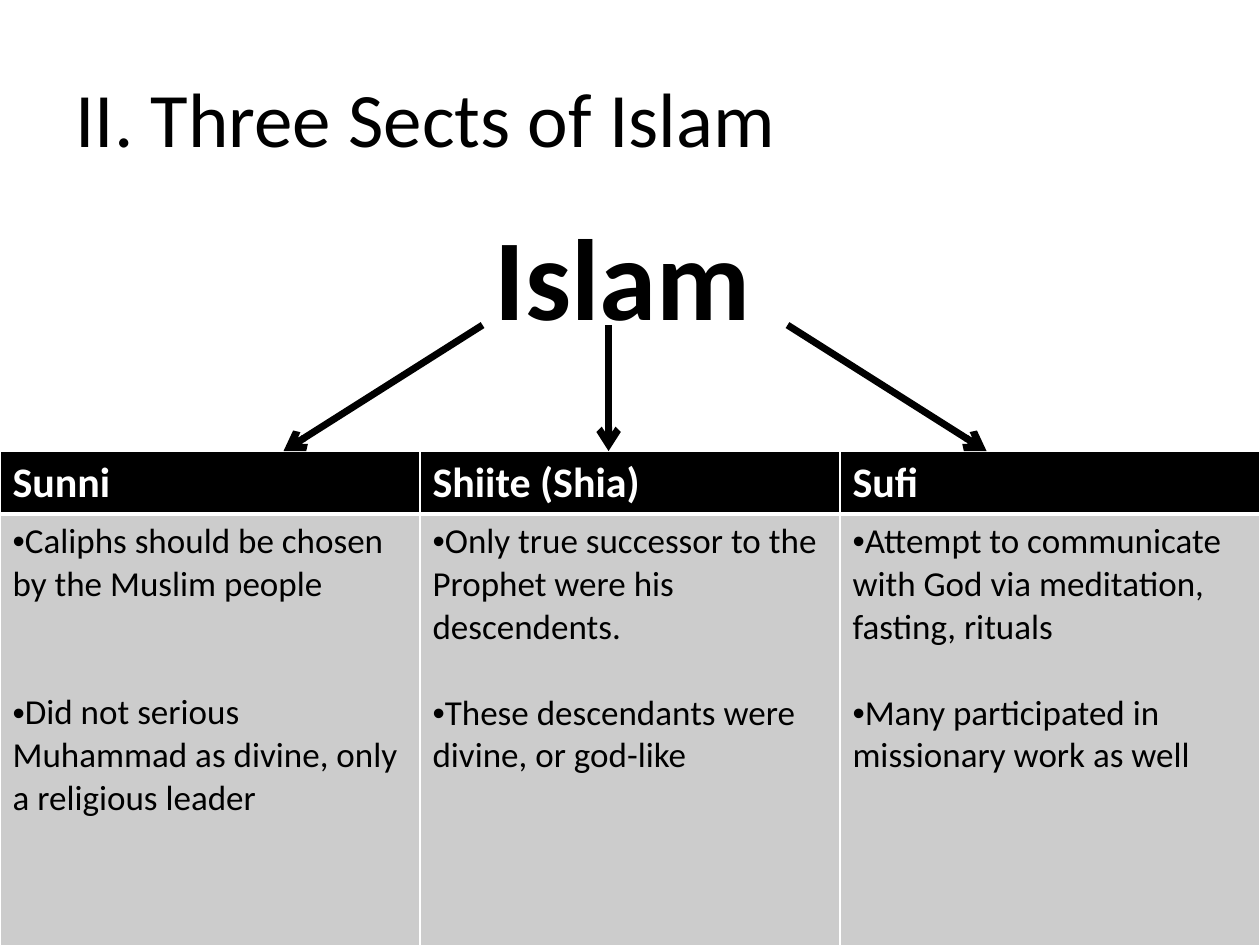
from lxml import etree
from pptx import Presentation
from pptx.dml.color import RGBColor
from pptx.enum.shapes import MSO_CONNECTOR
from pptx.enum.text import MSO_ANCHOR
from pptx.oxml.ns import qn
from pptx.util import Inches, Pt

COLORS = {"black": "000000", "white": "FFFFFF", "body": "CCCCCC"}
LINE_GAP = 24.4  # height of one 20 pt line

# Sect name, lines of space between the points, points
SECTS = [
    ("Sunni", 2, ["Caliphs should be chosen by the Muslim people",
                  "Did not serious Muhammad as divine, only a religious leader"]),
    ("Shiite (Shia)", 1, ["Only true successor to the Prophet were his descendents.",
                          "These descendants were divine, or god-like"]),
    ("Sufi", 1, ["Attempt to communicate with God via meditation, fasting, rituals",
                 "Many participated in missionary work as well"]),
]


def write(p, text, size, color="black", bold=False, bullet=False):
    if bullet:
        pPr = p._p.get_or_add_pPr()
        pPr.set("marL", "0")
        pPr.set("indent", "0")
        etree.SubElement(pPr, qn("a:buFont")).set("typeface", "Arial")
        etree.SubElement(pPr, qn("a:buChar")).set("char", "•")
    r = p.add_run()
    r.text = text
    r.font.name = "Calibri"
    r.font.size = Pt(size)
    r.font.bold = bold
    r.font.color.rgb = RGBColor.from_string(COLORS[color])


def style_cell(cell, fill, **widths):
    """Fill a cell and give it white borders, 1 pt unless widths says otherwise."""
    tcPr = cell._tc.get_or_add_tcPr()
    for side in ("lnL", "lnR", "lnT", "lnB"):
        ln = etree.SubElement(tcPr, qn(f"a:{side}"), w=str(Pt(widths.get(side, 1))))
        solid = etree.SubElement(ln, qn("a:solidFill"))
        etree.SubElement(solid, qn("a:srgbClr"), val=COLORS["white"])
    cell.fill.solid()
    cell.fill.fore_color.rgb = RGBColor.from_string(COLORS[fill])


prs = Presentation()
prs.slide_width, prs.slide_height = Inches(10), Inches(7.5)
s = prs.slides.add_slide(prs.slide_layouts[6])

# Title
tf = s.shapes.add_textbox(Inches(0.5), Inches(0.3), Inches(9), Inches(1.25)).text_frame
tf.word_wrap = True
tf.vertical_anchor = MSO_ANCHOR.MIDDLE
write(tf.paragraphs[0], "II. Three Sects of Islam", 44)

# Table of sects
table = s.shapes.add_table(2, len(SECTS), Inches(0), Inches(3.58),
                           Inches(10), Inches(4.16)).table
table.rows[0].height, table.rows[1].height = Inches(0.5), Inches(3.66)
for col, (name, gap_lines, points) in enumerate(SECTS):
    header, body = table.cell(0, col), table.cell(1, col)
    style_cell(header, "black", lnB=3)
    style_cell(body, "body", lnT=3)
    write(header.text_frame.paragraphs[0], name, 24, "white", bold=True)
    tf = body.text_frame
    for i, point in enumerate(points):
        p = tf.add_paragraph() if i else tf.paragraphs[0]
        if i:
            p.space_before = Pt(gap_lines * LINE_GAP)
        write(p, point, 20, bullet=True)

# Root of the diagram
tf = s.shapes.add_textbox(Inches(3.83), Inches(1.58), Inches(2.26), Inches(1.21)).text_frame
tf.word_wrap = False
write(tf.paragraphs[0], "Islam", 66, bold=True)

# Arrows from the root to each column
for start_x, end_x in [(3.83, 2.25), (6.25, 7.83), (4.83, 4.83)]:
    arrow = s.shapes.add_connector(MSO_CONNECTOR.STRAIGHT, Inches(start_x), Inches(2.58),
                                   Inches(end_x), Inches(3.58))
    arrow.line.width = Pt(4)
    arrow.line.color.rgb = RGBColor.from_string(COLORS["black"])
    etree.SubElement(arrow.line._get_or_add_ln(), qn("a:tailEnd"), type="arrow")
    etree.SubElement(arrow._element.spPr, qn("a:effectLst"))

prs.save("out.pptx")
